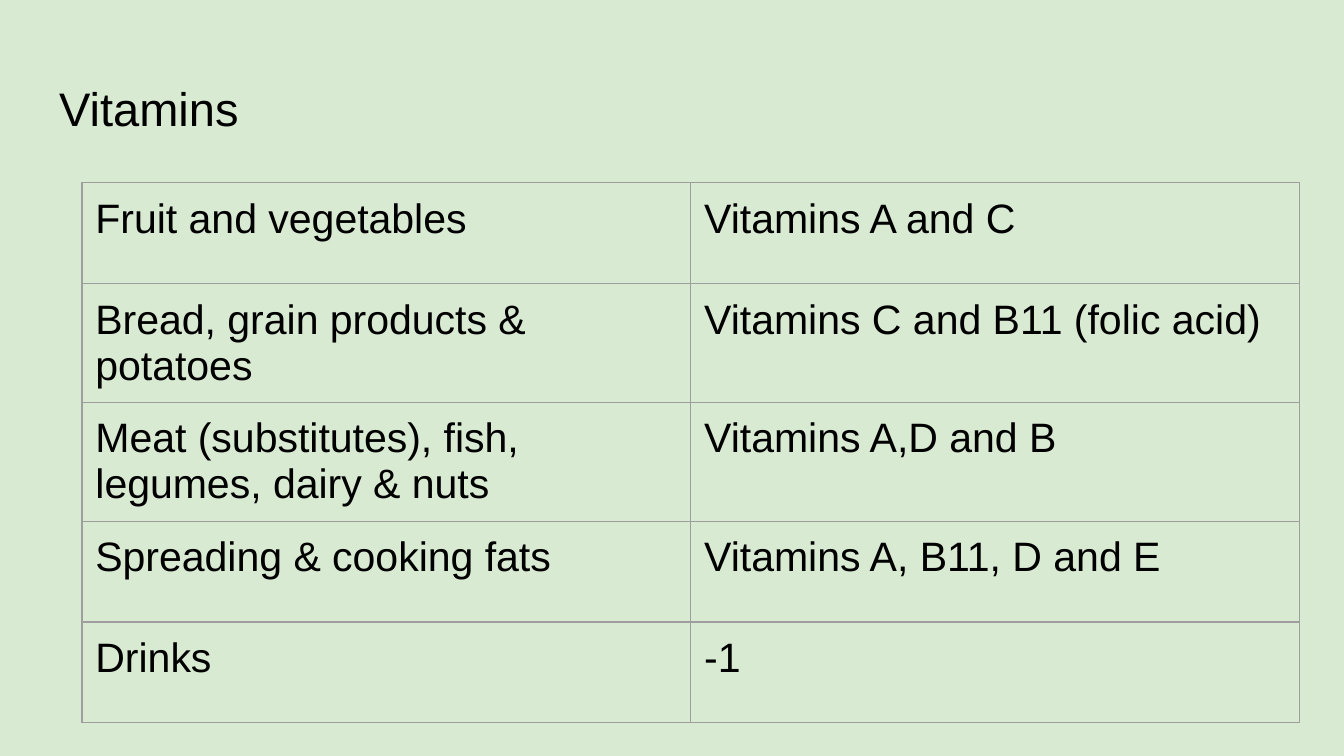
from pptx import Presentation
from pptx.dml.color import RGBColor
from pptx.enum.text import MSO_ANCHOR, PP_ALIGN
from pptx.oxml import parse_xml
from pptx.oxml.ns import nsdecls
from pptx.util import Inches, Pt

TITLE = "Vitamins"
ROWS = [
    ("Fruit and vegetables", "Vitamins A and C"),
    ("Bread, grain products & potatoes", "Vitamins C and B11 (folic acid)"),
    ("Meat (substitutes), fish, legumes, dairy & nuts", "Vitamins A,D and B"),
    ("Spreading & cooking fats", "Vitamins A, B11, D and E"),
    ("Drinks", "-1"),
]

FONT = "Arial"
BLACK = RGBColor(0x00, 0x00, 0x00)
GREEN = RGBColor(0xD9, 0xEA, 0xD3)
GREY = RGBColor(0x9E, 0x9E, 0x9E)
BORDER = Pt(0.75)
INSET = Inches(0.1)
COL_W, ROW_H = Inches(4.53), Inches(0.75)


def add_text(tf, text, size):
    p = tf.paragraphs[0]
    p.alignment = PP_ALIGN.LEFT
    r = p.add_run()
    r.text = text
    r.font.name, r.font.size = FONT, Pt(size)
    r.font.bold = False
    r.font.color.rgb = BLACK


def set_insets(box):
    box.margin_left = box.margin_right = INSET
    box.margin_top = box.margin_bottom = INSET


def add_borders(cell):
    """Draw all four cell borders; they must precede the fill in tcPr."""
    tc_pr = cell._tc.get_or_add_tcPr()
    for i, side in enumerate(("lnL", "lnR", "lnT", "lnB")):
        tc_pr.insert(i, parse_xml(
            f'<a:{side} {nsdecls("a")} w="{BORDER}"><a:solidFill>'
            f'<a:srgbClr val="{GREY}"/></a:solidFill></a:{side}>'))


prs = Presentation()
prs.slide_width = Inches(10)
prs.slide_height = prs.slide_width * 9 // 16
s = prs.slides.add_slide(prs.slide_layouts[5])
s.background.fill.solid()
s.background.fill.fore_color.rgb = GREEN

title = s.shapes.title
title.left, title.top = Inches(0.34), Inches(0.49)
title.width, title.height = Inches(9.32), Inches(0.63)
tf = title.text_frame
tf.word_wrap = True
tf.vertical_anchor = MSO_ANCHOR.TOP
set_insets(tf)
add_text(tf, TITLE, 25.2)

n_rows, n_cols = len(ROWS), len(ROWS[0])
table = s.shapes.add_table(n_rows, n_cols, Inches(0.61), Inches(1.36),
                           COL_W * n_cols, ROW_H * n_rows).table
table.first_row = table.horz_banding = False
for col in table.columns:
    col.width = COL_W
for row, texts in zip(table.rows, ROWS):
    row.height = ROW_H
    for cell, text in zip(row.cells, texts):
        set_insets(cell)
        cell.vertical_anchor = MSO_ANCHOR.TOP
        cell.fill.background()
        add_borders(cell)
        add_text(cell.text_frame, text, 22)

prs.save("out.pptx")
